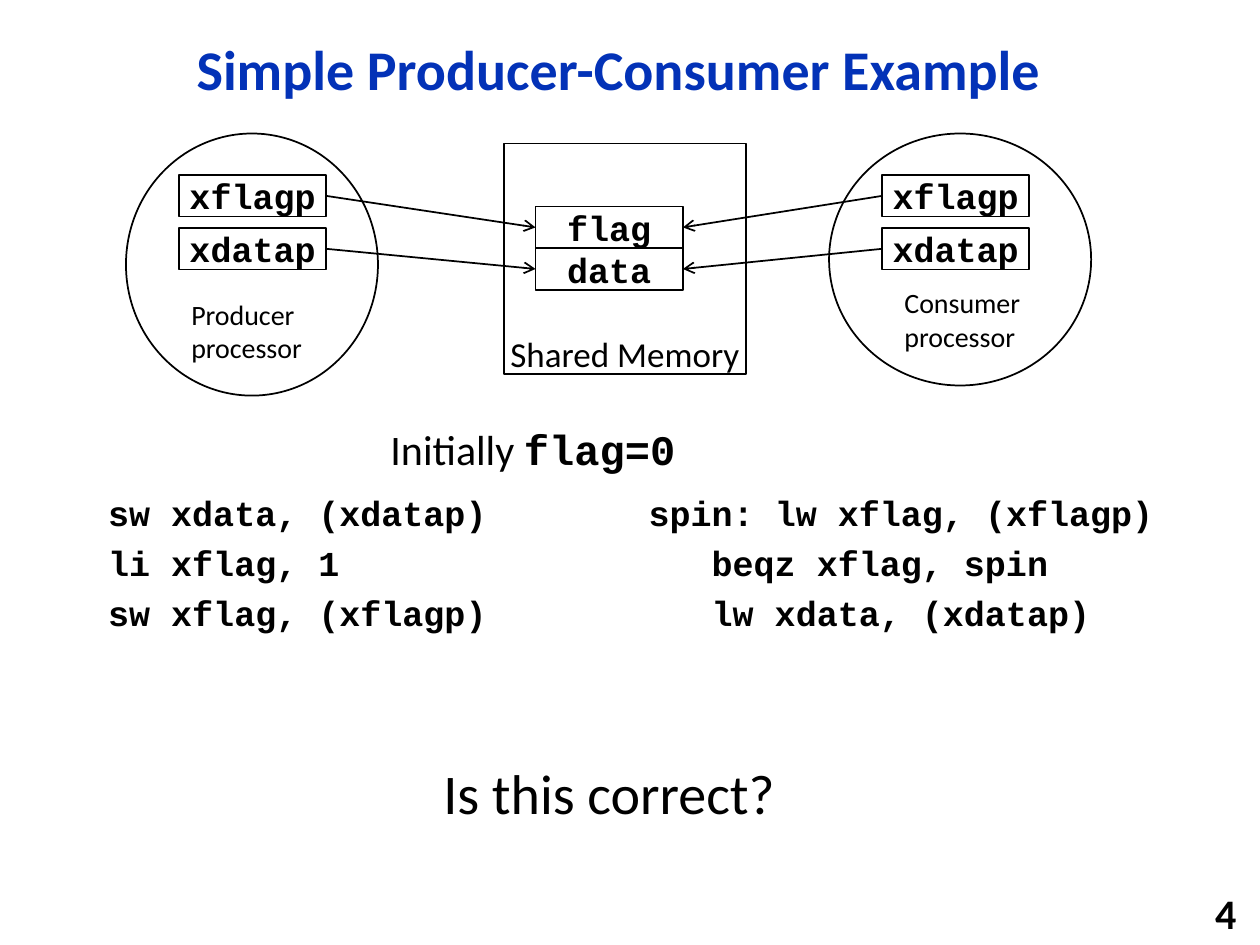
from dataclasses import dataclass

from pptx import Presentation
from pptx.dml.color import RGBColor
from pptx.enum.shapes import MSO_CONNECTOR, MSO_SHAPE
from pptx.enum.text import MSO_ANCHOR, PP_ALIGN
from pptx.oxml.ns import qn
from pptx.util import Inches, Pt
from lxml.etree import SubElement

TOP, LEFT, BOTTOM, RIGHT = range(4)  # connection sites of a rectangle


@dataclass
class Theme:
    ink: RGBColor = RGBColor(0, 0, 0)
    paper: RGBColor = RGBColor(255, 255, 255)
    accent: RGBColor = RGBColor(0x03, 0x32, 0xB7)
    sans: str = "Calibri"
    mono: str = "Courier New"
    title: int = 32
    heading: int = 24
    body: int = 20
    caption: int = 16
    line: int = 1
    code_gap: int = 7


class Deck:
    def __init__(self, prs, theme):
        self.theme = theme
        self.s = prs.slides.add_slide(prs.slide_layouts[6])

    def style(self, r, size, mono=False, bold=False, color=None):
        f = r.font
        f.name = self.theme.mono if mono else self.theme.sans
        f.size, f.bold = Pt(size), bold or mono
        f.color.rgb = color or self.theme.ink

    def shape(self, kind, x, y, w, h):
        sp = self.s.shapes.add_shape(kind, Inches(x), Inches(y), Inches(w), Inches(h))
        sp.shadow.inherit = False
        sp.fill.solid()
        sp.fill.fore_color.rgb = self.theme.paper
        sp.line.color.rgb = self.theme.ink
        sp.line.width = Pt(self.theme.line)
        return sp

    def box(self, text, x, y, w=1.17, h=0.33, mono=True, anchor=MSO_ANCHOR.MIDDLE):
        sp = self.shape(MSO_SHAPE.RECTANGLE, x, y, w, h)
        tf = sp.text_frame
        tf.margin_left = tf.margin_top = tf.margin_right = tf.margin_bottom = 0
        tf.vertical_anchor = anchor
        tf.text = text
        p = tf.paragraphs[0]
        p.alignment = PP_ALIGN.CENTER
        self.style(p.runs[0], self.theme.body, mono)
        return sp

    def text(self, text, x, y, w, h, size, align=PP_ALIGN.LEFT,
             anchor=MSO_ANCHOR.TOP, wrap=True, **font):
        tf = self.s.shapes.add_textbox(Inches(x), Inches(y), Inches(w), Inches(h)).text_frame
        tf.word_wrap = wrap
        tf.vertical_anchor = anchor
        tf.text = text
        for p in tf.paragraphs:
            p.alignment = align
            for r in p.runs:
                self.style(r, size, **font)
        return tf

    def code(self, lines, x, y, w, h):
        tf = self.text("\n".join(lines), x, y, w, h, self.theme.body, mono=True)
        for i, p in enumerate(tf.paragraphs):
            p.line_spacing = 0.9
            p.space_before = Pt(self.theme.code_gap if i else 0)

    def arrow(self, start, start_side, end, end_side):
        c = self.s.shapes.add_connector(MSO_CONNECTOR.STRAIGHT, 0, 0, 0, 0)
        c.begin_connect(start, start_side)
        c.end_connect(end, end_side)
        c.line.color.rgb = self.theme.ink
        c.line.width = Pt(self.theme.line)
        SubElement(c.line._get_or_add_ln(), qn("a:tailEnd"), type="arrow")
        SubElement(c._element.spPr, qn("a:effectLst"))


def main():
    prs = Presentation()
    prs.slide_width, prs.slide_height = Inches(10), Inches(7.5)
    theme = Theme()
    deck = Deck(prs, theme)

    # Title
    title = deck.text("Simple Producer-Consumer Example", 0.92, 0.17, 7.98, 0.81, theme.title,
                      PP_ALIGN.CENTER, MSO_ANCHOR.MIDDLE, bold=True, color=theme.accent)
    title.paragraphs[0].line_spacing = 0.9

    # Shared memory
    deck.box("Shared Memory", 4, 1.14, 1.92, 1.83, mono=False, anchor=MSO_ANCHOR.BOTTOM)
    memory = [deck.box(name, 4.25, 1.64 + i * 0.33) for i, name in enumerate(("flag", "data"))]

    # Processors: circle, pointer registers, arrows into memory, caption
    processors = [
        ("Producer processor", (1, 1.06, 2, 2.08), 1.42, (1.42, 2.31), RIGHT, LEFT),
        ("Consumer processor", (6.58, 1.06, 2.08, 2), 7, (7.08, 2.22), LEFT, RIGHT),
    ]
    for caption, circle, register_x, caption_at, out_side, in_side in processors:
        deck.shape(MSO_SHAPE.OVAL, *circle)
        for i, name in enumerate(("xflagp", "xdatap")):
            register = deck.box(name, register_x, 1.39 + i * 0.42)
            deck.arrow(register, out_side, memory[i], in_side)
        deck.text(caption, *caption_at, 1.17, 0.64, theme.caption)

    # Initial state
    tf = deck.text("Initially ", 3, 3.31, 2.48, 0.5, theme.heading, wrap=False)
    r = tf.paragraphs[0].add_run()
    r.text = "flag=0"
    deck.style(r, theme.heading, mono=True)

    # Code of both processors
    deck.code(["sw xdata, (xdatap)", "li xflag, 1", "sw xflag, (xflagp)"],
              0.76, 3.89, 4.12, 3.03)
    deck.code(["spin: lw xflag, (xflagp)", "\tbeqz xflag, spin", "\tlw xdata, (xdatap)"],
              5.05, 3.89, 4.28, 3.03)

    # Question and slide number
    deck.text("Is this correct?", 3.42, 5.97, 2.87, 0.64, theme.title, wrap=False)
    deck.text("4", 7.83, 7.08, 2.08, 0.32, theme.heading, PP_ALIGN.RIGHT,
              MSO_ANCHOR.MIDDLE, bold=True)

    prs.save("out.pptx")


if __name__ == "__main__":
    main()
